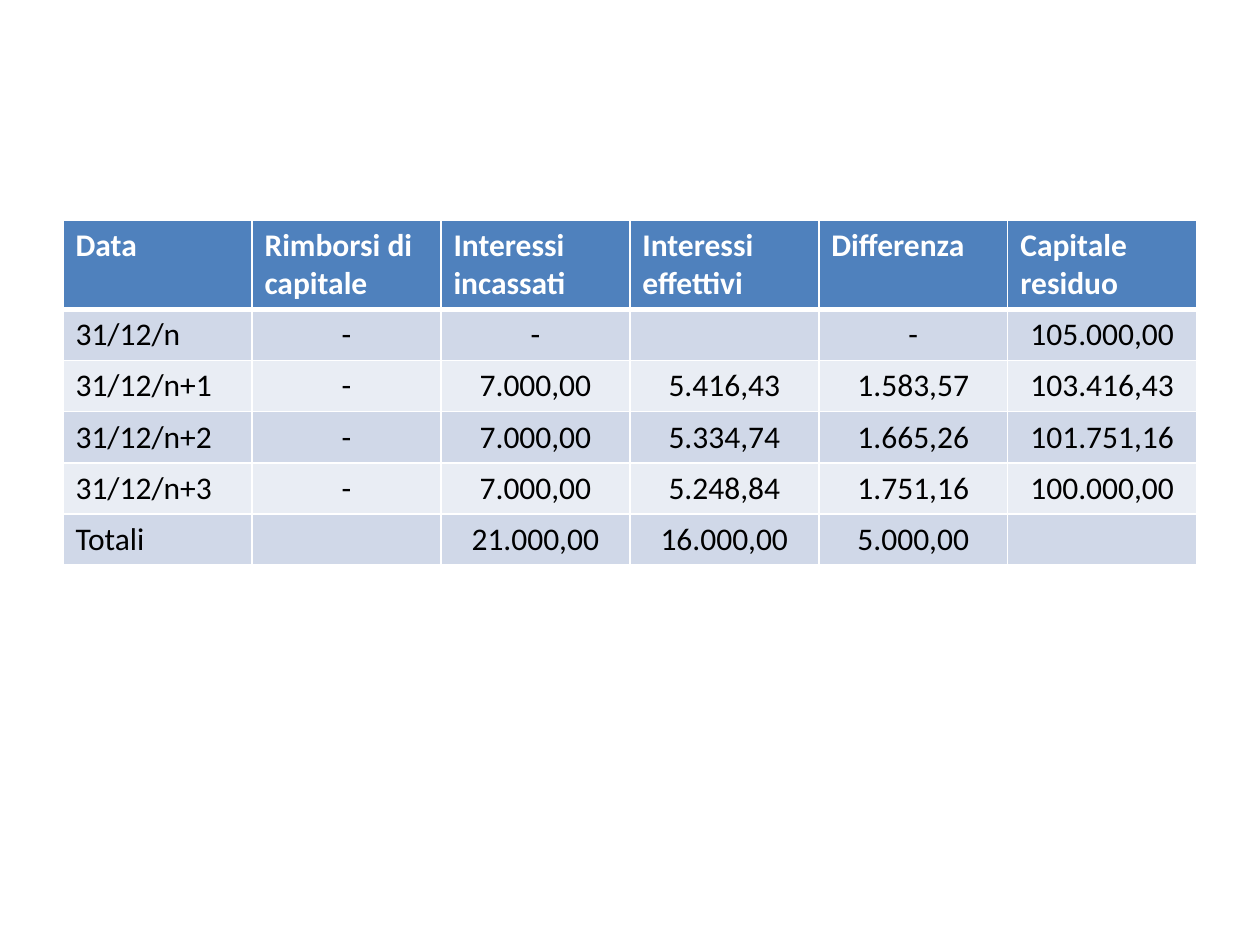
from pptx import Presentation
from pptx.dml.color import RGBColor
from pptx.enum.text import PP_ALIGN
from pptx.oxml.ns import qn
from pptx.util import Pt
from lxml.etree import SubElement

PX = 914400 // 126
COLORS = {"header": "4F81BD", "odd": "D0D8E8", "even": "E9EDF4",
          "white": "FFFFFF", "black": "000000"}
HEADER_H, ROW_H, COL_W = 88, 51, 189
ROWS = [
    ["Data", "Rimborsi di\ncapitale", "Interessi incassati",
     "Interessi\neffettivi", "Differenza", "Capitale residuo"],
    ["31/12/n", "-", "-", "", "-", "105.000,00"],
    ["31/12/n+1", "-", "7.000,00", "5.416,43", "1.583,57", "103.416,43"],
    ["31/12/n+2", "-", "7.000,00", "5.334,74", "1.665,26", "101.751,16"],
    ["31/12/n+3", "-", "7.000,00", "5.248,84", "1.751,16", "100.000,00"],
    ["Totali", "", "21.000,00", "16.000,00", "5.000,00", ""],
]


def px(n):
    return n * PX


def rgb(name):
    return RGBColor.from_string(COLORS[name])


def set_borders(cell, top, bottom):
    tcPr = cell._tc.get_or_add_tcPr()
    for side, width in (("L", 1), ("R", 1), ("T", top), ("B", bottom)):
        ln = SubElement(tcPr, qn(f"a:ln{side}"), w=str(Pt(width)))
        fill = SubElement(ln, qn("a:solidFill"))
        SubElement(fill, qn("a:srgbClr"), val=COLORS["white"])


def format_cell(cell, text, row, col):
    header = row == 0
    set_borders(cell, 3 if row == 1 else 1, 3 if header else 1)
    cell.fill.solid()
    cell.fill.fore_color.rgb = rgb("header" if header else "odd" if row % 2 else "even")
    cell.text_frame.text = text
    for p in cell.text_frame.paragraphs:
        p.alignment = PP_ALIGN.LEFT if header or col == 0 else PP_ALIGN.CENTER
        for r in p.runs:
            r.font.name = "Calibri"
            r.font.size = Pt(18)
            r.font.bold = header
            r.font.color.rgb = rgb("white" if header else "black")


def add_interest_table(s, left, top):
    n_rows, n_cols = len(ROWS), len(ROWS[0])
    height = HEADER_H + ROW_H * (n_rows - 1)
    table = s.shapes.add_table(n_rows, n_cols, px(left), px(top),
                               px(COL_W * n_cols), px(height)).table
    for column in table.columns:
        column.width = px(COL_W)
    for i, texts in enumerate(ROWS):
        table.rows[i].height = px(ROW_H if i else HEADER_H)
        for j, text in enumerate(texts):
            format_cell(table.cell(i, j), text, i, j)


def main():
    prs = Presentation()
    prs.slide_width, prs.slide_height = px(1260), px(945)
    s = prs.slides.add_slide(prs.slide_layouts[6])
    add_interest_table(s, 63, 220)
    prs.save("out.pptx")


if __name__ == "__main__":
    main()
